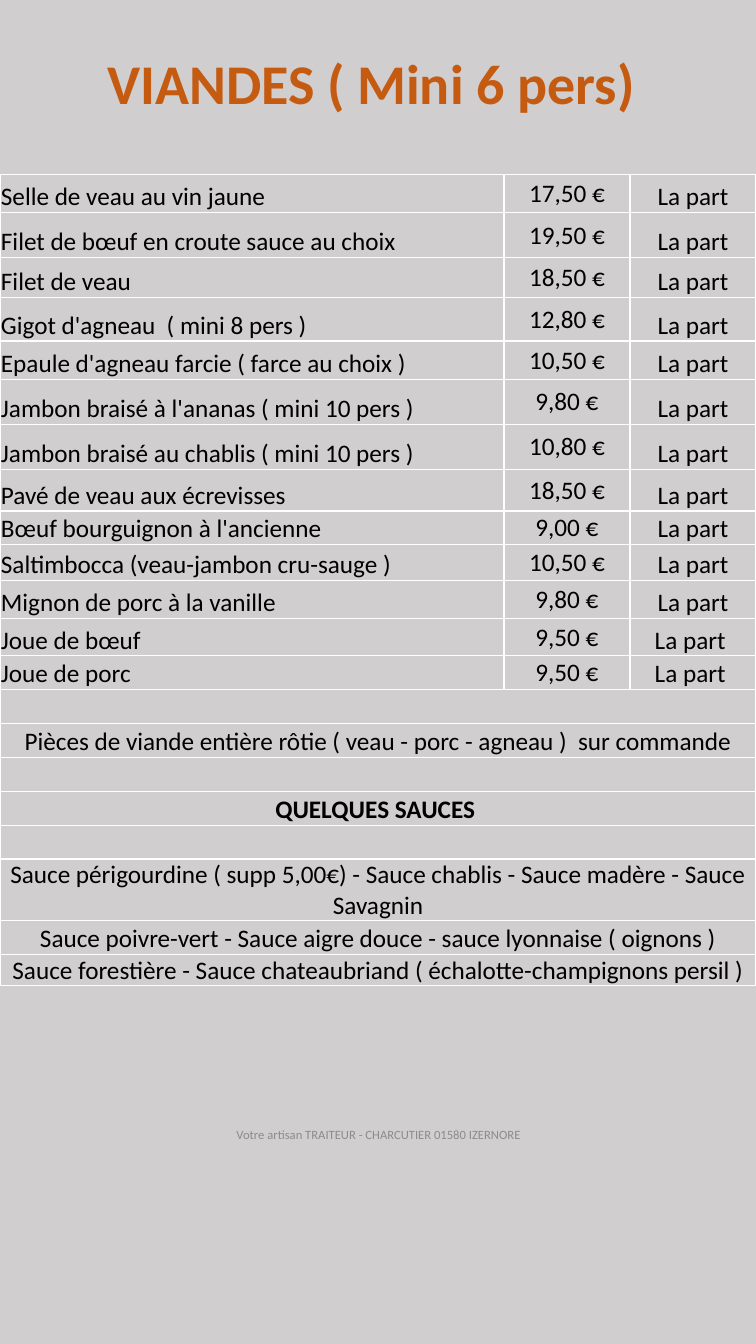
from lxml import etree
from pptx import Presentation
from pptx import util as u
from pptx.dml.color import RGBColor
from pptx.enum import text
from pptx.oxml.ns import qn

Pt = u.Pt
GREY, WHITE, BLACK = "D0CECE", "FFFFFF", "000000"
ORANGE, FOOTER_GREY = "C55A11", "8C8C8C"
LEFT, CENTER = text.PP_ALIGN.LEFT, text.PP_ALIGN.CENTER
TOP, MIDDLE, BOTTOM = text.MSO_ANCHOR.TOP, text.MSO_ANCHOR.MIDDLE, text.MSO_ANCHOR.BOTTOM

TITLE = "VIANDES ( Mini 6 pers)"
FOOTER = "Votre artisan TRAITEUR - CHARCUTIER 01580 IZERNORE"
DISHES = [
    ("Selle de veau au vin jaune", "17,50 €", "La part", 27.4),
    ("Filet de bœuf en croute sauce au choix", "19,50 €", "La part", 32.2),
    ("Filet de veau", "18,50 €", "La part", 28.6),
    ("Gigot d'agneau  ( mini 8 pers )", "12,80 €", "La part", 31),
    ("Epaule d'agneau farcie ( farce au choix )", "10,50 €", "La part", 27.4),
    ("Jambon braisé à l'ananas ( mini 10 pers )", "9,80 €", "La part", 32.2),
    ("Jambon braisé au chablis ( mini 10 pers )", "10,80 €", "La part", 32.2),
    ("Pavé de veau aux écrevisses", "18,50 €", "La part", 29.8),
    ("Bœuf bourguignon à l'ancienne", "9,00 €", "La part", 23.8),
    ("Saltimbocca (veau-jambon cru-sauge )", "10,50 €", "La part", 25.7),
    ("Mignon de porc à la vanille", "9,80 €", "La part", 27.4),
    ("Joue de bœuf", "9,50 €", "La part ", 26.6),
    ("Joue de porc", "9,50 €", "La part ", 24.2),
]
NOTES = [
    ("", False, 24.2),
    ("Pièces de viande entière rôtie ( veau - porc - agneau )  sur commande", False, 24.2),
    ("", False, 24.2),
    ("QUELQUES SAUCES ", True, 24.2),
    ("", False, 24.2),
    ("Sauce périgourdine ( supp 5,00€) - Sauce chablis - Sauce madère - Sauce Savagnin", False, 44),
    ("Sauce poivre-vert - Sauce aigre douce - sauce lyonnaise ( oignons )", False, 24.2),
    ("Sauce forestière - Sauce chateaubriand ( échalotte-champignons persil )", False, 22.4),
]
COLUMNS = [(360, LEFT, BOTTOM), (90, CENTER, MIDDLE), (90, CENTER, BOTTOM)]
TABLE_TOP = 124.4
CELL = dict(margin_left=Pt(0.7), margin_right=Pt(0.7), margin_top=Pt(0.7), margin_bottom=0)


def rgb(value):
    return RGBColor.from_string(value)


def assign(obj, values):
    for name, value in values.items():
        setattr(obj, name, value)


def write(tf, words, align, size, color, bold=False):
    p = tf.paragraphs[0]
    p.alignment = align
    font = p.add_run().font if words else p.font
    if words:
        p.runs[0].text = words
    assign(font, dict(name="Calibri", size=Pt(size), bold=bold))
    font.color.rgb = rgb(color)


def add_text(slide, box, words, align, anchor, size, color, bold=False):
    tf = slide.shapes.add_textbox(*map(Pt, box)).text_frame
    assign(tf, dict(word_wrap=True, vertical_anchor=anchor))
    write(tf, words, align, size, color, bold)


def style_cell(cell, anchor):
    assign(cell, dict(CELL, vertical_anchor=anchor))
    cell.fill.solid()
    cell.fill.fore_color.rgb = rgb(GREY)
    tcPr = cell._tc.get_or_add_tcPr()
    for i, side in enumerate(("a:lnL", "a:lnR", "a:lnT", "a:lnB")):
        ln = etree.Element(qn(side), w=str(Pt(1)))
        fill = etree.SubElement(ln, qn("a:solidFill"))
        etree.SubElement(fill, qn("a:srgbClr"), val=WHITE)
        tcPr.insert(i, ln)


def add_menu(slide):
    heights = [row[-1] for row in DISHES + NOTES]
    widths = [col[0] for col in COLUMNS]
    frame = slide.shapes.add_table(len(heights), len(widths), 0, Pt(TABLE_TOP),
                                   Pt(sum(widths)), Pt(sum(heights)))
    table = frame.table
    assign(table, dict(first_row=False, horz_banding=False))
    for col, width in zip(table.columns, widths):
        col.width = Pt(width)
    for row, height in zip(table.rows, heights):
        row.height = Pt(height)
        for cell, (_, _, anchor) in zip(row.cells, COLUMNS):
            style_cell(cell, anchor)
    for r, dish in enumerate(DISHES):
        for c, (_, align, _) in enumerate(COLUMNS):
            write(table.cell(r, c).text_frame, dish[c], align, 18, BLACK)
    for r, (words, bold, _) in enumerate(NOTES, len(DISHES)):
        cell = table.cell(r, 0)
        cell.merge(table.cell(r, len(COLUMNS) - 1))
        write(cell.text_frame, words, CENTER, 18, BLACK, bold)


def main():
    prs = Presentation()
    assign(prs, dict(slide_width=Pt(540), slide_height=Pt(960)))
    slide = prs.slides.add_slide(prs.slide_layouts[6])
    slide.background.fill.solid()
    slide.background.fill.fore_color.rgb = rgb(GREY)
    add_text(slide, (149, 785, 242.6, 51), FOOTER, CENTER, MIDDLE, 9, FOOTER_GREY)
    add_text(slide, (69.8, 31, 400.3, 55.4), TITLE, LEFT, TOP, 40, ORANGE, True)
    add_menu(slide)
    prs.save("out.pptx")


if __name__ == "__main__":
    main()
